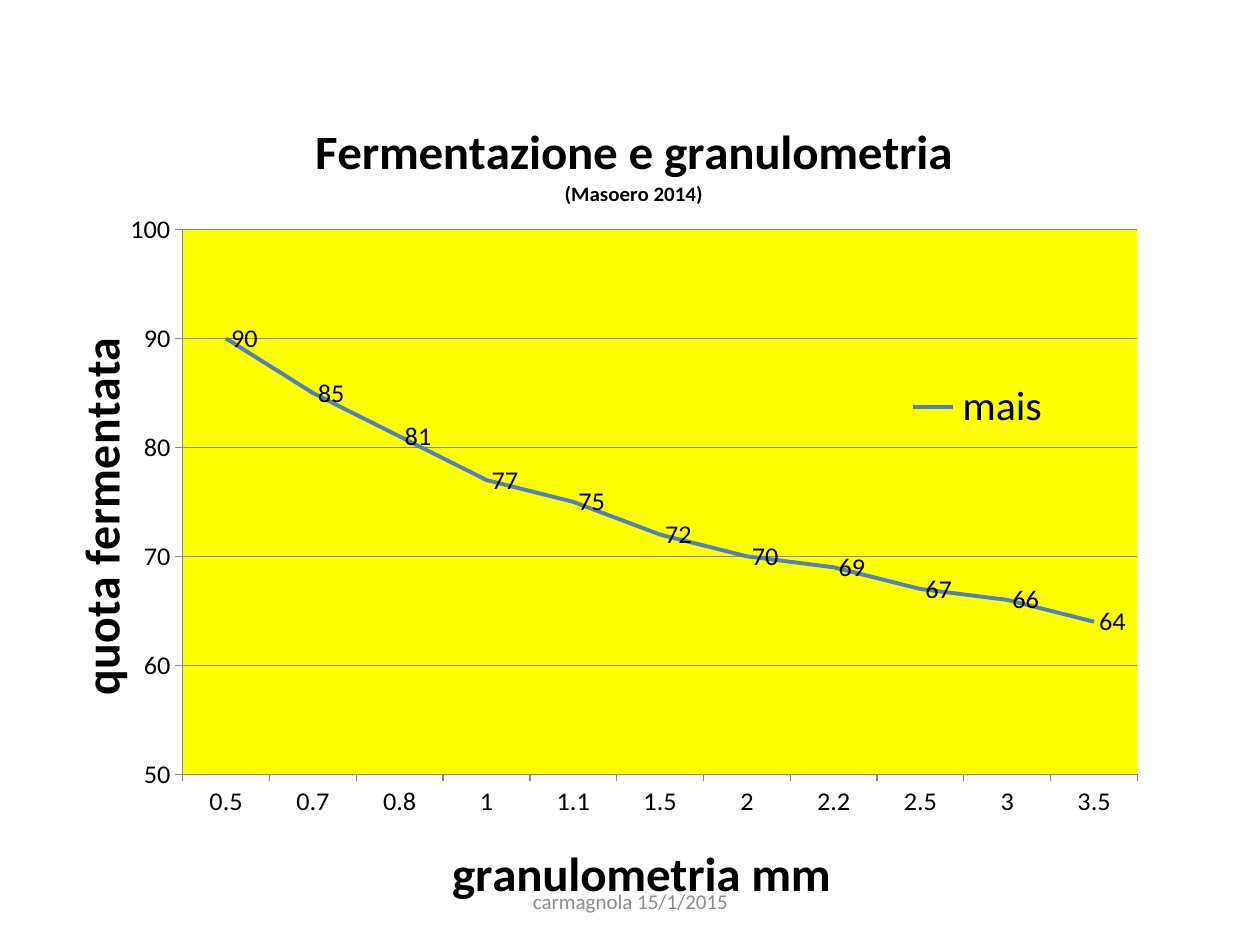
from lxml import etree
from pptx import Presentation
from pptx.chart.data import CategoryChartData
from pptx.dml.color import RGBColor
from pptx.enum.chart import XL_CHART_TYPE, XL_LABEL_POSITION, XL_LEGEND_POSITION, XL_TICK_MARK
from pptx.enum.text import MSO_ANCHOR, PP_ALIGN
from pptx.oxml.ns import qn
from pptx.util import Pt

LINE = XL_CHART_TYPE.LINE
LABEL_RIGHT = XL_LABEL_POSITION.RIGHT
LEGEND_RIGHT = XL_LEGEND_POSITION.RIGHT
TICK_OUT = XL_TICK_MARK.OUTSIDE
MIDDLE = MSO_ANCHOR.MIDDLE
CENTER = PP_ALIGN.CENTER

BLACK = RGBColor(0x00, 0x00, 0x00)
GREY = RGBColor(0x8C, 0x8C, 0x8C)
AXIS_GREY = RGBColor(0x86, 0x86, 0x86)
YELLOW = RGBColor(0xFF, 0xFF, 0x00)
BLUE = RGBColor(0x4F, 0x81, 0xBD)

PX = 914400 / 126
SIZES = (0.5, 0.7, 0.8, 1, 1.1, 1.5, 2, 2.2, 2.5, 3, 3.5)
FERMENTED = (90, 85, 81, 77, 75, 72, 70, 69, 67, 66, 64)


def px(*lengths):
    return [round(n * PX) for n in lengths]


class SlideBuilder:
    font = "Calibri"

    def __init__(self, slide):
        self.slide = slide

    def style(self, font, size, color=BLACK, bold=False):
        font.name = self.font
        font.size = Pt(size)
        font.bold = bold
        font.color.rgb = color

    def place(self, element, after, **values):
        for old in element.findall(qn("c:layout")):
            element.remove(old)
        layout = etree.Element(qn("c:layout"))
        manual = etree.SubElement(layout, qn("c:manualLayout"))
        for tag, value in values.items():
            etree.SubElement(manual, qn(f"c:{tag}")).set("val", str(value))
        anchor = element.find(qn(after)) if after else None
        if anchor is None:
            element.insert(0, layout)
        else:
            anchor.addnext(layout)

    def title(self, owner, lines, x, y):
        title = owner.chart_title if hasattr(owner, "chart_title") else owner.axis_title
        tf = title.text_frame
        tf.text = "\n".join(text for text, size in lines)
        for p, (text, size) in zip(tf.paragraphs, lines):
            for r in p.runs:
                self.style(r.font, size, bold=True)
        self.place(tf._txBody.getparent().getparent(), "c:tx",
                   xMode="edge", yMode="edge", x=x, y=y)

    def axis(self, axis, text, x, y):
        axis.major_tick_mark = TICK_OUT
        axis.format.line.color.rgb = AXIS_GREY
        self.style(axis.tick_labels.font, 15)
        self.title(axis, [(text, 28)], x, y)

    def line_chart(self, box, name, categories, values):
        data = CategoryChartData()
        data.categories = [str(c) for c in categories]
        data.add_series(name, values)
        chart = self.slide.shapes.add_chart(LINE, *px(*box), data).chart
        self.style(chart.font, 15)

        self.title(chart, [("Fermentazione e granulometria", 28), ("(Masoero 2014)", 12)], 0.23, 0.04)
        self.axis(chart.category_axis, "granulometria mm", 0.34, 0.92)
        scale = chart.value_axis
        self.axis(scale, "quota fermentata", 0.02, 0.31)
        scale.minimum_scale, scale.maximum_scale, scale.major_unit = 50, 100, 10
        scale.has_major_gridlines = True
        scale.major_gridlines.format.line.color.rgb = AXIS_GREY

        plot = chart.plots[0]
        plot.vary_by_categories = False
        series = plot.series[0]
        series.smooth = False
        series.format.line.color.rgb = BLUE
        series.format.line.width = Pt(2.25)
        labels = series.data_labels
        labels.show_value = True
        labels.position = LABEL_RIGHT
        self.style(labels.font, 15)

        chart.has_legend = True
        legend = chart.legend
        legend.position = LEGEND_RIGHT
        legend.include_in_layout = False
        self.style(legend.font, 24)
        self.place(legend._element, "c:legendPos", xMode="edge", yMode="edge",
                   x=0.72, y=0.36, w=0.13, h=0.07)

        area = plot._element.getparent()
        self.place(area, None, layoutTarget="inner", xMode="edge", yMode="edge",
                   x=0.123, y=0.177, w=0.795, h=0.671)
        props = etree.SubElement(area, qn("c:spPr"))
        fill = etree.SubElement(props, qn("a:solidFill"))
        etree.SubElement(fill, qn("a:srgbClr")).set("val", str(YELLOW))

    def text(self, box, text, size, color):
        tf = self.slide.shapes.add_textbox(*px(*box)).text_frame
        tf.word_wrap = True
        tf.vertical_anchor = MIDDLE
        tf.text = text
        p = tf.paragraphs[0]
        p.alignment = CENTER
        self.style(p.runs[0].font, size, color)


def main():
    prs = Presentation()
    prs.slide_width, prs.slide_height = px(1260, 945)
    builder = SlideBuilder(prs.slides.add_slide(prs.slide_layouts[6]))
    builder.line_chart((35, 86, 1201, 833), "mais", SIZES, FERMENTED)
    builder.text((431, 876, 399, 50), "carmagnola 15/1/2015", 12, GREY)
    prs.save("out.pptx")


if __name__ == "__main__":
    main()
